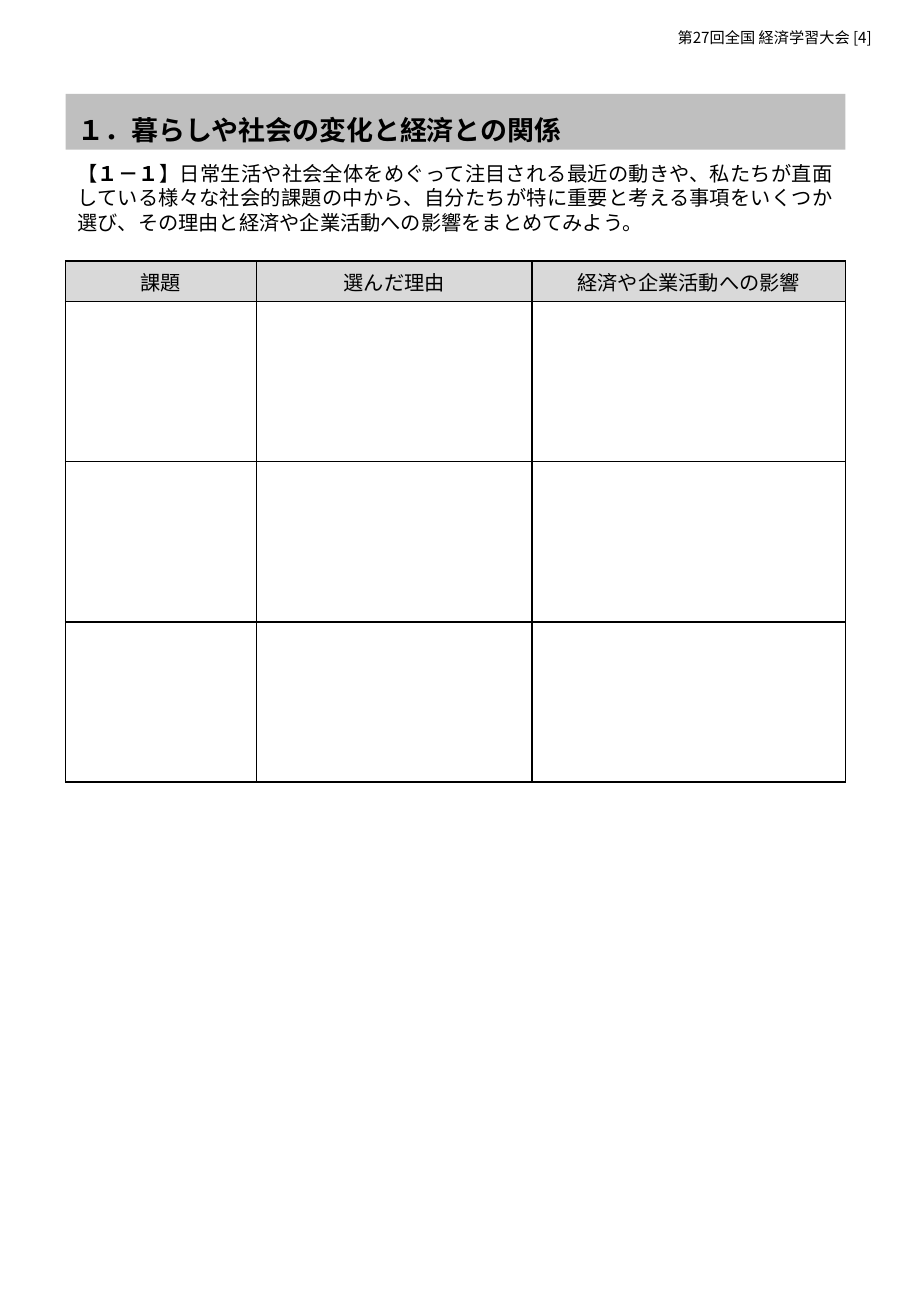
from lxml import etree
from pptx import Presentation
from pptx.dml.color import RGBColor
from pptx.enum.text import MSO_ANCHOR, MSO_AUTO_SIZE, PP_ALIGN
from pptx.oxml.ns import qn
from pptx.util import Cm, Pt

LEFT, CENTER, JUSTIFY = PP_ALIGN.LEFT, PP_ALIGN.CENTER, PP_ALIGN.JUSTIFY
MIDDLE = MSO_ANCHOR.MIDDLE
NO_FIT = MSO_AUTO_SIZE.NONE
FONT = "Noto Sans CJK JP"
BLACK, HEADING_GRAY, HEADER_GRAY = "000000", "BFBFBF", "D9D9D9"

MARGIN, CONTENT_WIDTH = 1.37, 16.31
COLUMN_WIDTHS = (3.99, 5.77, 6.55)
HEADER_HEIGHT, ANSWER_HEIGHT, ANSWER_ROWS = 0.84, 3.35, 3
COLUMN_TITLES = ("課題", "選んだ理由", "経済や企業活動への影響")


def color(hex_string):
    return RGBColor.from_string(hex_string)


def add_span(para, text, size, bold=False):
    span = para.add_run()
    span.text = text
    span.font.name = FONT
    span.font.size = Pt(size)
    span.font.bold = bold
    span.font.color.rgb = color(BLACK)
    # Japanese glyphs take the East Asian typeface, which follows a:latin.
    latin = span.font._element.find(qn("a:latin"))
    east_asian = etree.Element(qn("a:ea"), typeface=FONT)
    latin.addnext(east_asian)


def add_text(page, left, top, width, height, spans, size, align, wrap=True):
    """Add a one-paragraph text box; spans are (text, bold) pairs."""
    box = page.shapes.add_textbox(Cm(left), Cm(top), Cm(width), Cm(height))
    box.text_frame.word_wrap = wrap
    para = box.text_frame.paragraphs[0]
    para.alignment = align
    for text, bold in spans:
        add_span(para, text, size, bold)


def place_heading(page, left, top, width, height):
    heading = page.shapes.title
    heading.left, heading.top = Cm(left), Cm(top)
    heading.width, heading.height = Cm(width), Cm(height)
    heading.fill.solid()
    heading.fill.fore_color.rgb = color(HEADING_GRAY)
    frame = heading.text_frame
    frame.auto_size = NO_FIT
    frame.word_wrap = True
    frame.vertical_anchor = MIDDLE
    para = frame.paragraphs[0]
    para.alignment = LEFT
    para.line_spacing = 1.5
    add_span(para, "１．暮らしや社会の変化と経済との関係", 16, True)


def add_borders(cell):
    properties = cell._tc.get_or_add_tcPr()
    for side in ("lnL", "lnR", "lnT", "lnB"):
        line = etree.SubElement(properties, qn(f"a:{side}"), w=str(Pt(1)))
        fill = etree.SubElement(line, qn("a:solidFill"))
        etree.SubElement(fill, qn("a:srgbClr"), val=BLACK)


def add_answer_table(page, left, top):
    heights = [HEADER_HEIGHT] + [ANSWER_HEIGHT] * ANSWER_ROWS
    table = page.shapes.add_table(
        len(heights), len(COLUMN_WIDTHS), Cm(left), Cm(top),
        Cm(sum(COLUMN_WIDTHS)), Cm(sum(heights))).table
    table.first_row = table.horz_banding = False
    for column, width in zip(table.columns, COLUMN_WIDTHS):
        column.width = Cm(width)
    for row, height in zip(table.rows, heights):
        row.height = Cm(height)
    for cell in table.iter_cells():
        add_borders(cell)
        cell.fill.background()
    for cell, title in zip(table.rows[0].cells, COLUMN_TITLES):
        cell.fill.solid()
        cell.fill.fore_color.rgb = color(HEADER_GRAY)
        cell.vertical_anchor = MIDDLE
        cell.margin_left = cell.margin_right = Cm(0.1)
        cell.margin_top = cell.margin_bottom = Cm(0.1)
        para = cell.text_frame.paragraphs[0]
        para.alignment = CENTER
        add_span(para, title, 12)


def build_worksheet(deck):
    page = deck.slides.add_slide(deck.slide_layouts[5])
    add_text(page, 13.92, 0.46, 5.13, 0.64,
             [("第27回全国 経済学習大会 [4]", False)], 9, LEFT, wrap=False)
    place_heading(page, MARGIN, 1.96, CONTENT_WIDTH, 1.17)
    instruction = [
        ("【", False),
        ("１－１", True),
        ("】日常生活や社会全体をめぐって注目される最近の動きや、私たちが直面"
         "している様々な社会的課題の中から、自分たちが特に重要と考える事項を"
         "いくつか選び、その理由と経済や企業活動への影響をまとめてみよう。", False),
    ]
    add_text(page, MARGIN, 3.25, CONTENT_WIDTH, 1.8, instruction, 12, JUSTIFY)
    add_answer_table(page, MARGIN, 5.46)


def main():
    deck = Presentation()
    deck.slide_width, deck.slide_height = Cm(19.05), Cm(27.51)
    build_worksheet(deck)
    deck.save("out.pptx")


if __name__ == "__main__":
    main()
